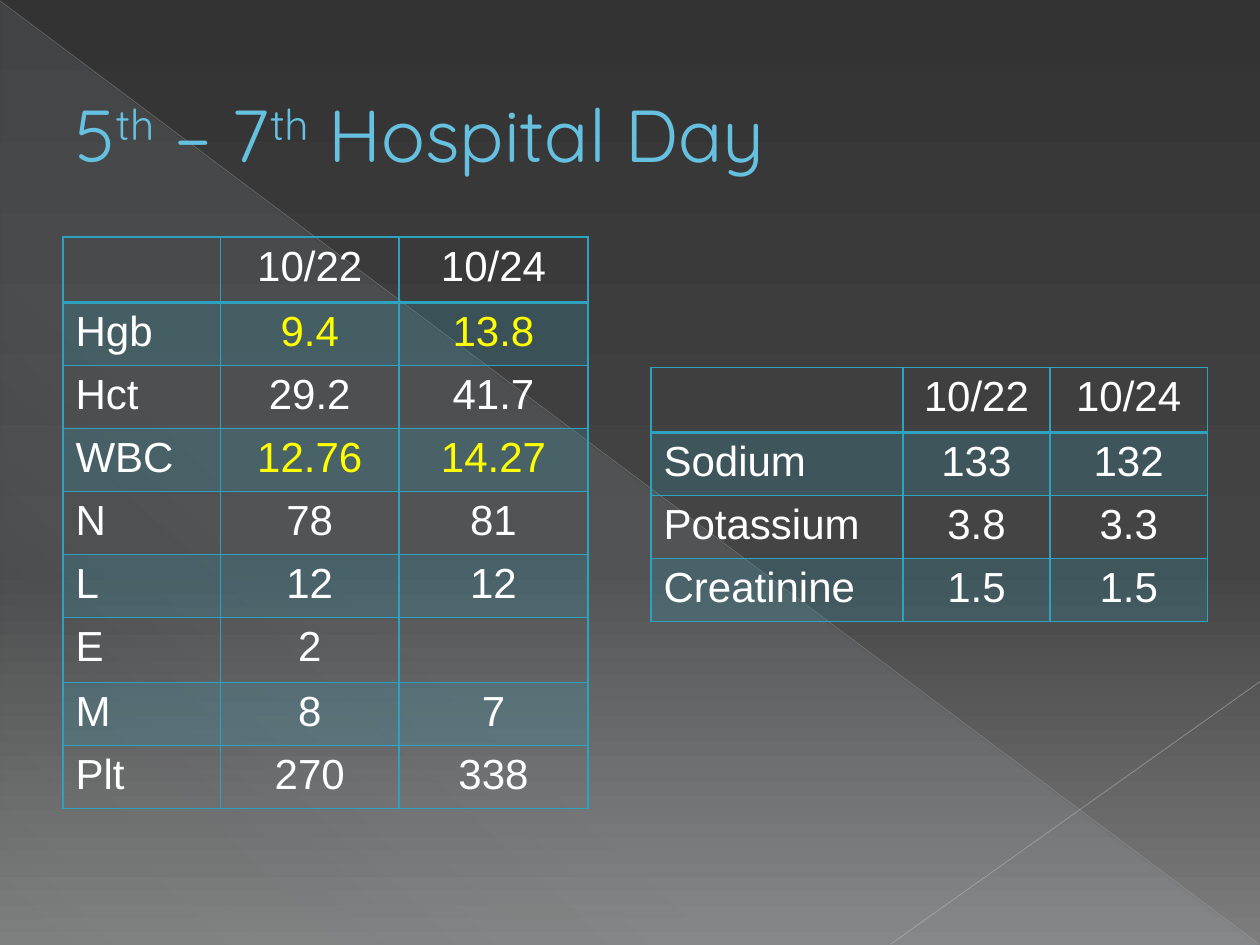
"""Build the 5th – 7th hospital day slide with its two lab tables."""
import pptx
import pptx.util
import pptx.dml.color
import pptx.enum.shapes
import pptx.enum.text
import pptx.oxml.ns
from lxml import etree

Pt = pptx.util.Pt
RGB = pptx.dml.color.RGBColor.from_string
qn = pptx.oxml.ns.qn
ALIGN = pptx.enum.text.PP_ALIGN
COLORS = {
    "top": "333333", "middle": "444444", "bottom": "7D7D7D", "glow": "DEF5FA",
    "ray": "B9B9B9", "ray2": "C1C1C1", "title": "66C0E0", "outline": "1F7084",
    "teal": "2DA2BF", "text": "FFFFFF", "abnormal": "FFFF00",
}


def add_text(p, text, size=24, font="Arial", color="text", align=ALIGN.LEFT, raised=False, outline=None):
    p.alignment = align
    r = p.add_run()
    r.text = text
    r.font.size = Pt(size)
    r.font.name = font
    r.font.color.rgb = RGB(COLORS[color])
    rPr = r.font._element
    if raised:
        rPr.set("baseline", "30000")
    if outline:
        ln = etree.Element(qn("a:ln"), w=str(Pt(0.5)))
        fill = etree.SubElement(ln, qn("a:solidFill"))
        etree.SubElement(fill, qn("a:srgbClr"), val=COLORS[outline])
        rPr.insert(0, ln)


def set_gradient(parent, stops, angle):
    grad = etree.Element(qn("a:gradFill"), rotWithShape="1")
    gs_list = etree.SubElement(grad, qn("a:gsLst"))
    for pos, color, alpha in stops:
        gs = etree.SubElement(gs_list, qn("a:gs"), pos=str(pos * 1000))
        clr = etree.SubElement(gs, qn("a:srgbClr"), val=COLORS[color])
        if alpha < 100:
            etree.SubElement(clr, qn("a:alpha"), val=str(alpha * 1000))
    etree.SubElement(grad, qn("a:lin"), ang=str(angle * 60000), scaled="0")
    parent.replace(parent.find(qn("a:solidFill")), grad)


prs = pptx.Presentation()
prs.slide_width, prs.slide_height = Pt(720), Pt(540)
s = prs.slides.add_slide(prs.slide_layouts[6])

s.background.fill.solid()
set_gradient(s.element.find(".//" + qn("p:bgPr")),
             [(0, "top", 100), (60, "middle", 100), (100, "bottom", 100)], 90)

sp = s.shapes.add_shape(pptx.enum.shapes.MSO_SHAPE.RIGHT_TRIANGLE, Pt(0.5), Pt(1), Pt(719), Pt(539))
sp.shadow.inherit = False
sp.line.fill.background()
sp.fill.solid()
set_gradient(sp.element.spPr, [(0, "glow", 10), (70, "glow", 8), (100, "glow", 1)], 133)

for x1, y1, x2, y2, color, width, alpha in [
    (0, 0.5, 719.5, 539.5, "ray", 0.39, 35),
    (720, 389.5, 509, 539.5, "ray2", 0.47, 45),
]:
    cx = s.shapes.add_connector(pptx.enum.shapes.MSO_CONNECTOR.STRAIGHT, Pt(x1), Pt(y1), Pt(x2), Pt(y2))
    cx.line.color.rgb = RGB(COLORS[color])
    cx.line.width = Pt(width)
    spPr = cx.element.spPr
    etree.SubElement(spPr.find(".//" + qn("a:srgbClr")), qn("a:alpha"), val=str(alpha * 1000))
    etree.SubElement(spPr, qn("a:effectLst"))

tf = s.shapes.add_textbox(Pt(36), Pt(21), Pt(648), Pt(110)).text_frame
tf.word_wrap = True
tf.vertical_anchor = pptx.enum.text.MSO_ANCHOR.MIDDLE
for i, text in enumerate(["5", "th", " – 7", "th", " Hospital Day"]):
    add_text(tf.paragraphs[0], text, size=42, font="Quicksand", color="title",
             raised=i % 2 == 1, outline="outline")

blood_count = [
    ("", "10/22", "10/24"),
    ("Hgb", "9.4", "13.8"),
    ("Hct", "29.2", "41.7"),
    ("WBC", "12.76", "14.27"),
    ("N", "78", "81"),
    ("L", "12", "12"),
    ("E", "2", ""),
    ("M", "8", "7"),
    ("Plt", "270", "338"),
]
chemistry = [
    ("", "10/22", "10/24"),
    ("Sodium", "133", "132"),
    ("Potassium", "3.8", "3.3"),
    ("Creatinine", "1.5", "1.5"),
]
for rows, left, top, widths in [
    (blood_count, 36, 135.5, (90, 102, 108)),
    (chemistry, 372, 210, (144, 84, 90)),
]:
    heights = [37.2 if "" in row else 34 for row in rows]
    tbl = s.shapes.add_table(len(rows), 3, Pt(left), Pt(top), Pt(sum(widths)), Pt(sum(heights))).table
    tbl.first_row = tbl.horz_banding = False
    for col, width in zip(tbl.columns, widths):
        col.width = Pt(width)
    for i, row in enumerate(rows):
        tbl.rows[i].height = Pt(heights[i])
        for j, text in enumerate(row):
            cell = tbl.cell(i, j)
            if text:
                add_text(cell.text_frame.paragraphs[0], text,
                         color="abnormal" if j and row[0] in ("Hgb", "WBC") else "text",
                         align=ALIGN.CENTER if j else ALIGN.LEFT)
            cell.fill.background()
            tcPr = cell._tc.get_or_add_tcPr()
            if i % 2:
                cell.fill.solid()
                cell.fill.fore_color.rgb = RGB(COLORS["teal"])
                etree.SubElement(tcPr.find(".//" + qn("a:srgbClr")), qn("a:alpha"), val="20000")
            for k, side in enumerate("LRTB"):
                thick = (i, side) in ((0, "B"), (1, "T"))
                ln = etree.Element(qn("a:ln" + side), w=str(Pt(2 if thick else 1)))
                fill = etree.SubElement(ln, qn("a:solidFill"))
                etree.SubElement(fill, qn("a:srgbClr"), val=COLORS["teal"])
                tcPr.insert(k, ln)

prs.save("out.pptx")
